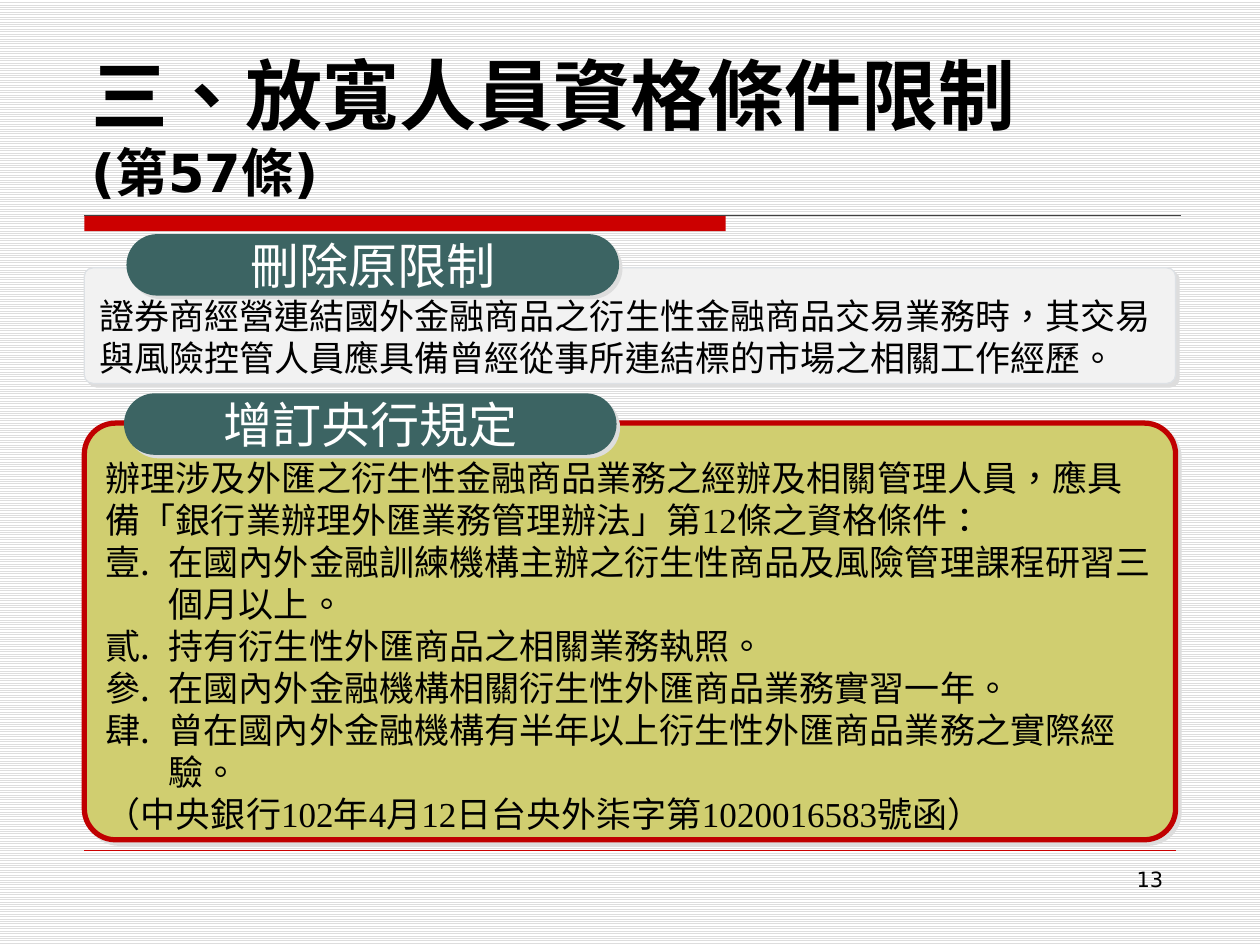
from dataclasses import dataclass

from lxml.etree import SubElement
from pptx import Presentation
from pptx.dml.color import RGBColor
from pptx.enum.dml import MSO_PATTERN
from pptx.enum.shapes import MSO_CONNECTOR, MSO_SHAPE
from pptx.enum.text import MSO_ANCHOR as Anchor, PP_ALIGN as Align
from pptx.oxml.ns import qn
from pptx.util import Cm, Pt


@dataclass(frozen=True)
class Theme:
    """Colours, fonts and type sizes of the slide."""
    ink: str = "000000"
    paper: str = "FFFFFF"
    stripe: str = "DDDDDD"
    accent: str = "CC0000"
    rule: str = "404040"
    pill: str = "3C6463"
    plain_card: str = "F2F2F2"
    plain_edge: str = "DDE1E5"
    strong_card: str = "D0CE70"
    strong_edge: str = "C00000"
    east_asian: str = "Noto Sans CJK SC"
    sans: str = "DejaVu Sans"
    label: str = "Arial"
    serif: str = "Times New Roman"
    title: int = 44
    subtitle: int = 30
    heading: int = 28
    body: int = 20
    small: int = 12


def rgb(value):
    """Turn a hex string into a colour."""
    return RGBColor.from_string(value)


def write(para, text, *, size, font, color, east_asian, bold=False):
    """Add one formatted span of Traditional Chinese text."""
    span = para.add_run()
    span.text = text
    span.font.size, span.font.name, span.font.bold = Pt(size), font, bold
    span.font.color.rgb = rgb(color)
    properties = span._r.get_or_add_rPr()
    properties.set("lang", "zh-TW")
    typeface = SubElement(properties, qn("a:ea"))
    typeface.set("typeface", east_asian)


def keep_punctuation_inside(para):
    """Stop punctuation from hanging past the right margin."""
    para._p.get_or_add_pPr().set("hangingPunct", "0")


def number(para):
    """Give a paragraph a hanging Chinese numeral."""
    properties = para._p.get_or_add_pPr()
    properties.set("marL", str(Cm(1.27)))
    properties.set("indent", str(-Cm(1.27)))
    SubElement(properties, qn("a:buFont")).set("typeface", "+mj-lt")
    SubElement(properties, qn("a:buAutoNum")).set("type", "ea1ChtPeriod")


class SlideBuilder:
    """Draws styled elements on the current slide."""

    def __init__(self, page, theme):
        """Keep the slide and its theme."""
        self.page, self.theme = page, theme

    def background(self):
        """Fill the slide with fine horizontal stripes."""
        fill = self.page.background.fill
        fill.patterned()
        fill.pattern = MSO_PATTERN.LIGHT_HORIZONTAL
        fill.fore_color.rgb = rgb(self.theme.stripe)
        fill.back_color.rgb = rgb(self.theme.paper)

    def text(self, para, text, **style):
        """Write a span in the theme's defaults unless overridden."""
        defaults = dict(size=self.theme.body, font=self.theme.label,
                        color=self.theme.ink, east_asian=self.theme.east_asian)
        write(para, text, **{**defaults, **style})

    def title(self, heading, article):
        """Fill the title placeholder with two lines."""
        box = self.page.shapes.title
        box.left, box.top, box.width, box.height = Cm(1.6), Cm(0.84), Cm(22.22), Cm(3.38)
        frame = box.text_frame
        frame.vertical_anchor = Anchor.BOTTOM
        para = frame.paragraphs[0]
        para.alignment = Align.LEFT
        self.text(para, heading, size=self.theme.title, font=self.theme.east_asian, bold=True)
        para.add_line_break()
        self.text(para, article, size=self.theme.subtitle, font=self.theme.sans, bold=True)

    def shape(self, kind, left, top, width, height, fill):
        """Add a filled shape without outline or shadow."""
        shape = self.page.shapes.add_shape(kind, Cm(left), Cm(top), Cm(width), Cm(height))
        shape.fill.solid()
        shape.fill.fore_color.rgb = rgb(fill)
        shape.line.fill.background()
        shape.shadow.inherit = False
        return shape

    def rounded(self, left, top, width, height, fill, radius):
        """Add a rounded rectangle with a pale offset shadow."""
        shape = self.shape(MSO_SHAPE.ROUNDED_RECTANGLE, left, top, width, height, fill)
        shape.adjustments[0] = radius
        effects = shape._element.spPr.find(qn("a:effectLst"))
        shadow = SubElement(effects, qn("a:outerShdw"), dist=str(Pt(2.8)),
                            dir="2700000", algn="ctr", rotWithShape="0")
        SubElement(shadow, qn("a:srgbClr"), val=self.theme.stripe)
        return shape

    def card(self, top, height, lines, *, fill, edge, weight, font):
        """Add a card holding (text, numbered) lines."""
        box = self.rounded(1.7, top, 22, height, fill, 0.075)
        box.line.color.rgb = rgb(edge)
        box.line.width = Pt(weight)
        frame = box.text_frame
        frame.word_wrap = True
        frame.vertical_anchor = Anchor.TOP
        frame.margin_top = Cm(0.49)
        for index, (line, numbered) in enumerate(lines):
            para = frame.add_paragraph() if index else frame.paragraphs[0]
            para.alignment = Align.LEFT
            keep_punctuation_inside(para)
            if numbered:
                number(para)
            self.text(para, line, font=font)

    def pill(self, left, top, label):
        """Add a heading pill."""
        box = self.rounded(left, top, 9.93, 1.24, self.theme.pill, 0.5)
        frame = box.text_frame
        frame.word_wrap = False
        frame.vertical_anchor = Anchor.MIDDLE
        para = frame.paragraphs[0]
        para.alignment = Align.CENTER
        self.text(para, label, size=self.theme.heading, color=self.theme.paper)

    def rule(self, top, right, color, weight):
        """Draw a horizontal line from the left margin."""
        line = self.page.shapes.add_connector(
            MSO_CONNECTOR.STRAIGHT, Cm(1.7), Cm(top), Cm(right), Cm(top))
        line.line.color.rgb = rgb(color)
        line.line.width = Pt(weight)
        SubElement(line._element.spPr, qn("a:effectLst"))

    def page_number(self, text):
        """Write the page number at the lower right."""
        box = self.page.shapes.add_textbox(Cm(18.2), Cm(17.35), Cm(5.5), Cm(1.32))
        box.text_frame.word_wrap = True
        para = box.text_frame.paragraphs[0]
        para.alignment = Align.RIGHT
        self.text(para, text, size=self.theme.small, font=self.theme.sans)


def main():
    """Build and save the slide."""
    deck = Presentation()
    deck.slide_width, deck.slide_height = Cm(25.4), Cm(19.05)
    theme = Theme()
    slide = SlideBuilder(deck.slides.add_slide(deck.slide_layouts[5]), theme)
    slide.background()
    slide.shape(MSO_SHAPE.RECTANGLE, 1.7, 4.34, 12.93, 0.32, theme.accent)
    slide.rule(4.34, 23.8, theme.rule, 0.75)
    slide.rule(17.14, 23.7, theme.accent, 0.25)
    slide.title("三、放寬人員資格條件限制", "(第57條)")
    slide.page_number("13")

    removed = [("證券商經營連結國外金融商品之衍生性金融商品交易業務時，其交易"
                "與風險控管人員應具備曾經從事所連結標的市場之相關工作經歷。", False)]
    added = [
        ("辦理涉及外匯之衍生性金融商品業務之經辦及相關管理人員，應具"
         "備「銀行業辦理外匯業務管理辦法」第12條之資格條件：", False),
        ("在國內外金融訓練機構主辦之衍生性商品及風險管理課程研習三個月以上。", True),
        ("持有衍生性外匯商品之相關業務執照。", True),
        ("在國內外金融機構相關衍生性外匯商品業務實習一年。", True),
        ("曾在國內外金融機構有半年以上衍生性外匯商品業務之實際經驗。", True),
        ("（中央銀行102年4月12日台央外柒字第1020016583號函）", False),
    ]
    slide.card(5.4, 2.33, removed, fill=theme.plain_card, edge=theme.plain_edge,
               weight=0.75, font=theme.label)
    slide.pill(2.55, 4.72, "刪除原限制")
    slide.card(8.53, 8.4, added, fill=theme.strong_card, edge=theme.strong_edge,
               weight=3, font=theme.serif)
    slide.pill(2.5, 7.93, "增訂央行規定")
    deck.save("out.pptx")


if __name__ == "__main__":
    main()
